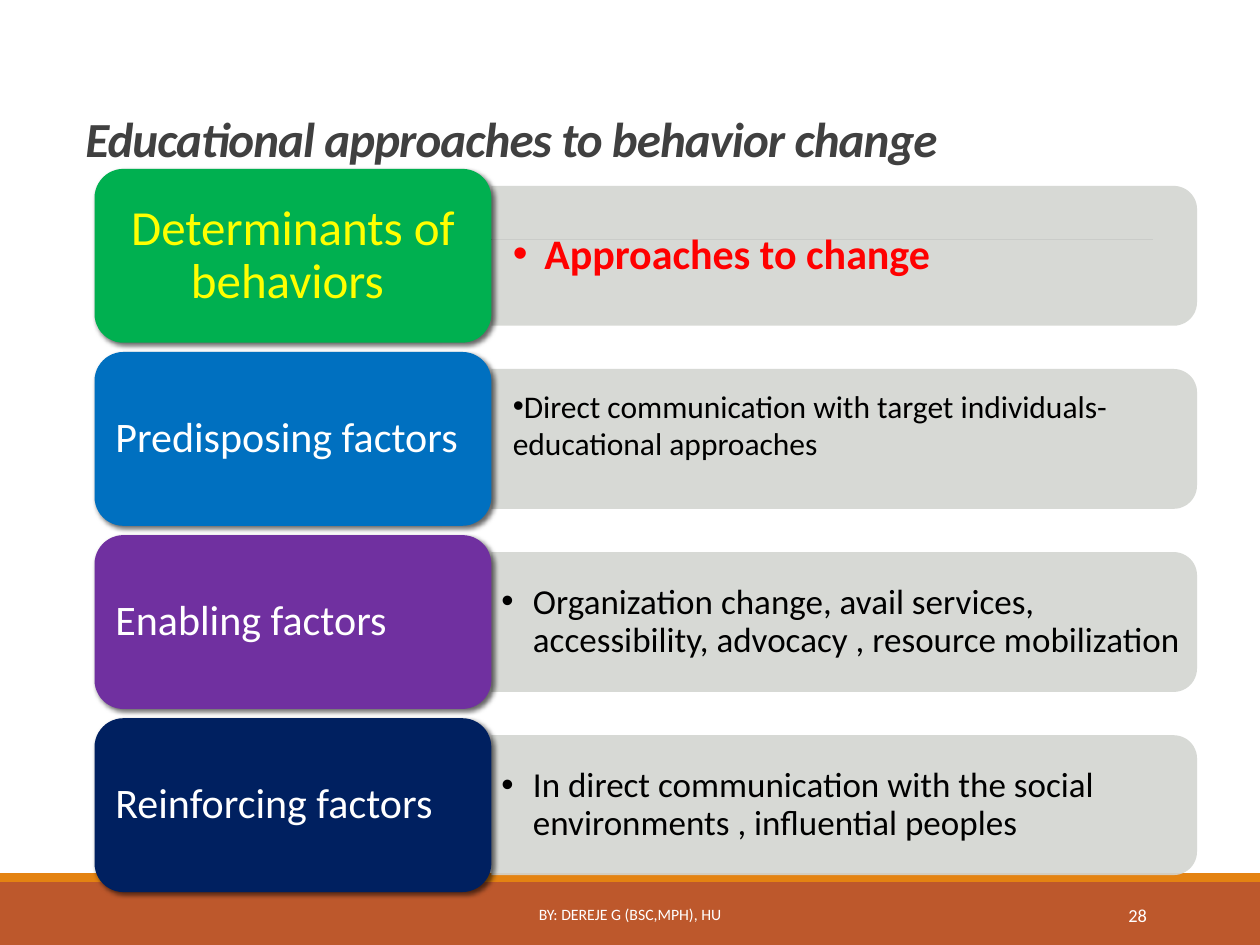
from dataclasses import dataclass

from lxml.etree import SubElement
from pptx import Presentation
from pptx.dml.color import RGBColor
from pptx.enum.shapes import MSO_CONNECTOR, MSO_SHAPE as Shape
from pptx.enum.text import MSO_ANCHOR as Anchor, PP_ALIGN as Align
from pptx.oxml.ns import qn
from pptx.util import Inches, Pt

COLUMNS, ROWS = 100, 75


@dataclass(frozen=True)
class Theme:
    font: str = "Calibri"
    white: str = "FFFFFF"
    black: str = "000000"
    title: str = "404040"
    rule: str = "808080"
    footer: str = "BD582C"
    accent: str = "E48312"
    panel: str = "D3D5D1"
    red: str = "FF0000"
    yellow: str = "FFFF00"
    green: str = "00B050"
    blue: str = "0070C0"
    purple: str = "7030A0"
    navy: str = "002060"
    heading_size: float = 28
    label_size: float = 24
    body_size: float = 20
    small_size: float = 18
    footer_size: float = 9
    number_size: float = 10.5


THEME = Theme()


@dataclass(frozen=True)
class Factor:
    label: str
    fill: str
    approach: str
    label_color: str = THEME.white
    label_size: float = THEME.label_size
    label_align: Align = Align.LEFT
    label_insets: tuple = (1, 0.5, 1, 0.5)
    color: str = THEME.black
    size: float = THEME.body_size
    bold: bool = False
    insets: tuple = (0.8, 0.4, 0.8, 0.4)
    hanging: float = 0.25
    line_spacing: float = 0.9


FACTORS = (
    Factor("Determinants of behaviors ", THEME.green, "Approaches to change",
           label_color=THEME.yellow, label_size=THEME.heading_size,
           label_align=Align.CENTER, label_insets=(1.2, 0.6, 1.2, 0.6),
           color=THEME.red, size=THEME.label_size, bold=True,
           insets=(1.7, 0.9, 1.7, 0.9)),
    Factor("Predisposing factors", THEME.blue,
           "Direct communication with target individuals-educational approaches",
           size=THEME.small_size, insets=(1.7, 0.9, 1.7, 3.2),
           hanging=0, line_spacing=1),
    Factor("Enabling factors", THEME.purple,
           "Organization change, avail services, accessibility, advocacy , "
           "resource mobilization"),
    Factor("Reinforcing factors", THEME.navy,
           "In direct communication with the social environments , "
           "influential peoples"),
)


class SlideBuilder:
    """Draws on one slide; lengths are columns and rows of the grid."""

    def __init__(self, presentation, theme):
        self.theme = theme
        self.column = presentation.slide_width / COLUMNS
        self.row = presentation.slide_height / ROWS
        self.slide = presentation.slides.add_slide(presentation.slide_layouts[6])

    def box(self, left, top, width, height):
        return (round(left * self.column), round(top * self.row),
                round(width * self.column), round(height * self.row))

    def shape(self, kind, area, fill):
        shape = self.slide.shapes.add_shape(kind, *self.box(*area))
        shape.fill.solid()
        shape.fill.fore_color.rgb = RGBColor.from_string(fill)
        shape.line.fill.background()
        shape.shadow.inherit = False
        return shape

    def rule(self, left, right, top):
        x1, y, x2, _ = self.box(left, top, right, 0)
        line = self.slide.shapes.add_connector(MSO_CONNECTOR.STRAIGHT, x1, y, x2, y)
        line.line.color.rgb = RGBColor.from_string(self.theme.rule)
        line.line.width = Pt(0.5)
        SubElement(line._element.spPr, qn("a:effectLst"))

    def fill_text(self, shape, text, size, color, align=Align.LEFT,
                  anchor=Anchor.MIDDLE, insets=(1, 0.5, 1, 0.5), line_spacing=1,
                  bold=False, italic=False):
        frame = shape.text_frame
        frame.word_wrap = True
        frame.vertical_anchor = anchor
        (frame.margin_left, frame.margin_top,
         frame.margin_right, frame.margin_bottom) = self.box(*insets)
        paragraph = frame.paragraphs[0]
        paragraph.alignment = align
        paragraph.line_spacing = line_spacing
        run = paragraph.add_run()
        run.text = text
        font = run.font
        font.name, font.size = self.theme.font, Pt(size)
        font.bold, font.italic = bold, italic
        font.color.rgb = RGBColor.from_string(color)
        return paragraph

    def text(self, area, *content, **style):
        return self.fill_text(self.slide.shapes.add_textbox(*self.box(*area)),
                              *content, **style)

    def bullet(self, paragraph, hanging):
        properties = paragraph._p.get_or_add_pPr()
        properties.set("marL", str(Inches(hanging)))
        properties.set("indent", str(-Inches(hanging)))
        SubElement(properties, qn("a:buFont"), typeface="Arial")
        SubElement(properties, qn("a:buChar"), char="•")

    def cast_shadow(self, shape):
        effects = shape._element.spPr.find(qn("a:effectLst"))
        shadow = SubElement(effects, qn("a:outerShdw"), blurRad=str(Pt(3)),
                            dist=str(Pt(2)), dir=str(45 * 60000), rotWithShape="0")
        color = SubElement(shadow, qn("a:srgbClr"), val=self.theme.black)
        SubElement(color, qn("a:alpha"), val="60000")

    def panel(self, left, middle, width, height):
        """Bar rounded at its right end: an upright shape turned a quarter."""
        area = (left + (width - height) / 2, middle - width / 2, height, width)
        shape = self.shape(Shape.ROUND_2_SAME_RECTANGLE, area, self.theme.panel)
        shape.rotation = 90
        color = shape._element.spPr.find(qn("a:solidFill"))[0]
        SubElement(color, qn("a:alpha"), val="90000")

    def factor(self, factor, top):
        height = 13.8
        middle = top + height / 2
        self.panel(39, middle, 56, 11.1)
        paragraph = self.text((39, middle - 5, 55.5, 10), factor.approach, factor.size,
                              factor.color, insets=factor.insets, bold=factor.bold,
                              line_spacing=factor.line_spacing)
        self.bullet(paragraph, factor.hanging)
        label = self.shape(Shape.ROUNDED_RECTANGLE, (7.5, top, 31.5, height), factor.fill)
        self.cast_shadow(label)
        self.fill_text(label, factor.label, factor.label_size, factor.label_color,
                       align=factor.label_align, insets=factor.label_insets,
                       line_spacing=0.9)


def main():
    presentation = Presentation()
    presentation.slide_width, presentation.slide_height = Inches(10), Inches(7.5)
    builder = SlideBuilder(presentation, THEME)

    builder.shape(Shape.RECTANGLE, (0, 70, COLUMNS, 5), THEME.footer)
    builder.shape(Shape.RECTANGLE, (0, 69.3, COLUMNS, 0.7), THEME.accent)
    builder.rule(9.8, 91.5, 19)
    title = builder.text((5.8, 6.7, 90, 7.1), "Educational approaches to behavior change",
                         THEME.heading_size, THEME.title, anchor=Anchor.BOTTOM,
                         line_spacing=0.85, bold=True, italic=True)
    title.runs[0].font._element.set("spc", "-50")

    first_top, last_top = 13.4, 57
    pitch = (last_top - first_top) / (len(FACTORS) - 1)
    for index, factor in enumerate(FACTORS):
        builder.factor(factor, first_top + index * pitch)

    builder.text((30.2, 70.6, 39.6, 4), "BY: DEREJE G (BSC,MPH), HU",
                 THEME.footer_size, THEME.white, align=Align.CENTER)
    builder.text((81.2, 70.6, 10.8, 4), "28",
                 THEME.number_size, THEME.white, align=Align.RIGHT)
    presentation.save("out.pptx")


if __name__ == "__main__":
    main()
